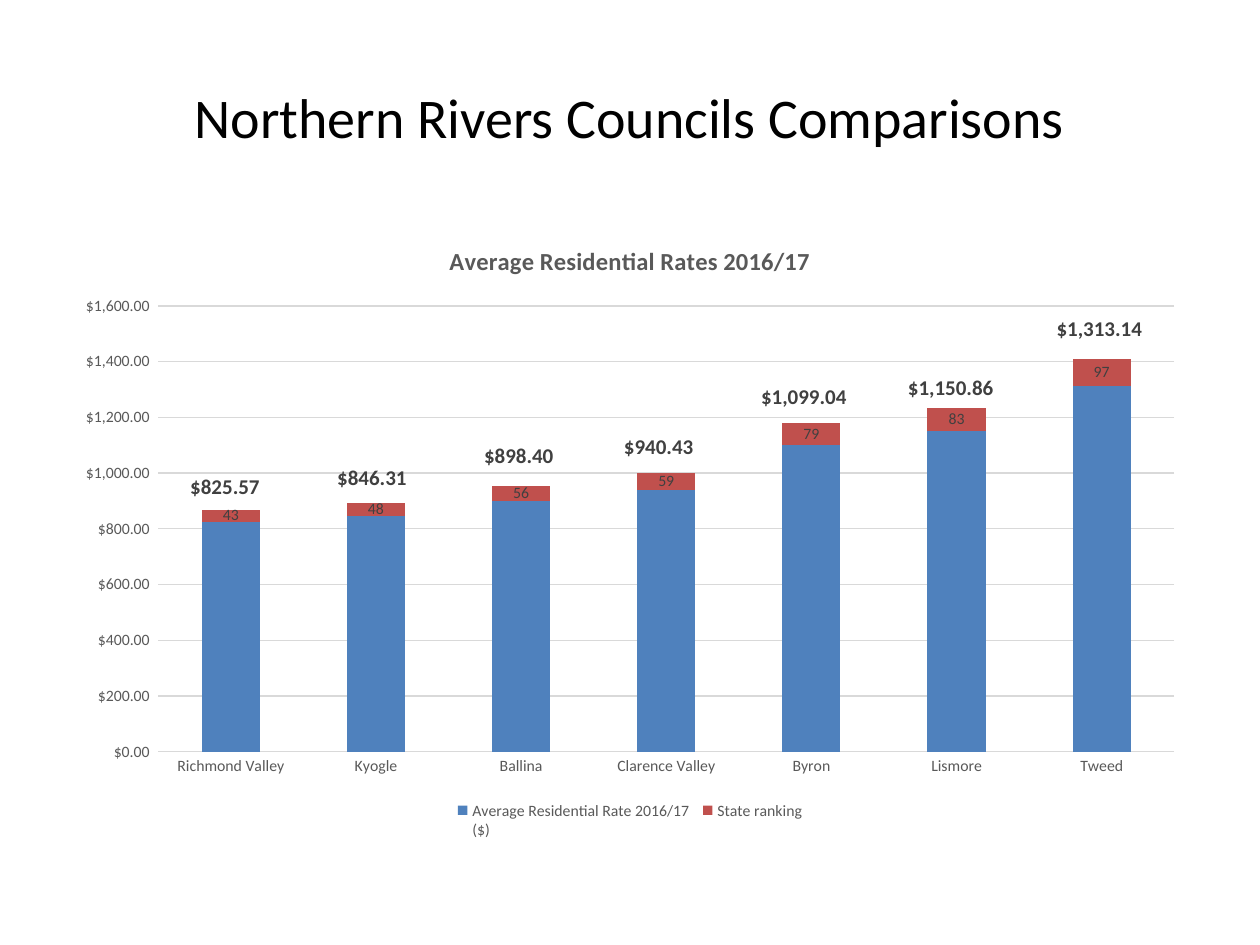
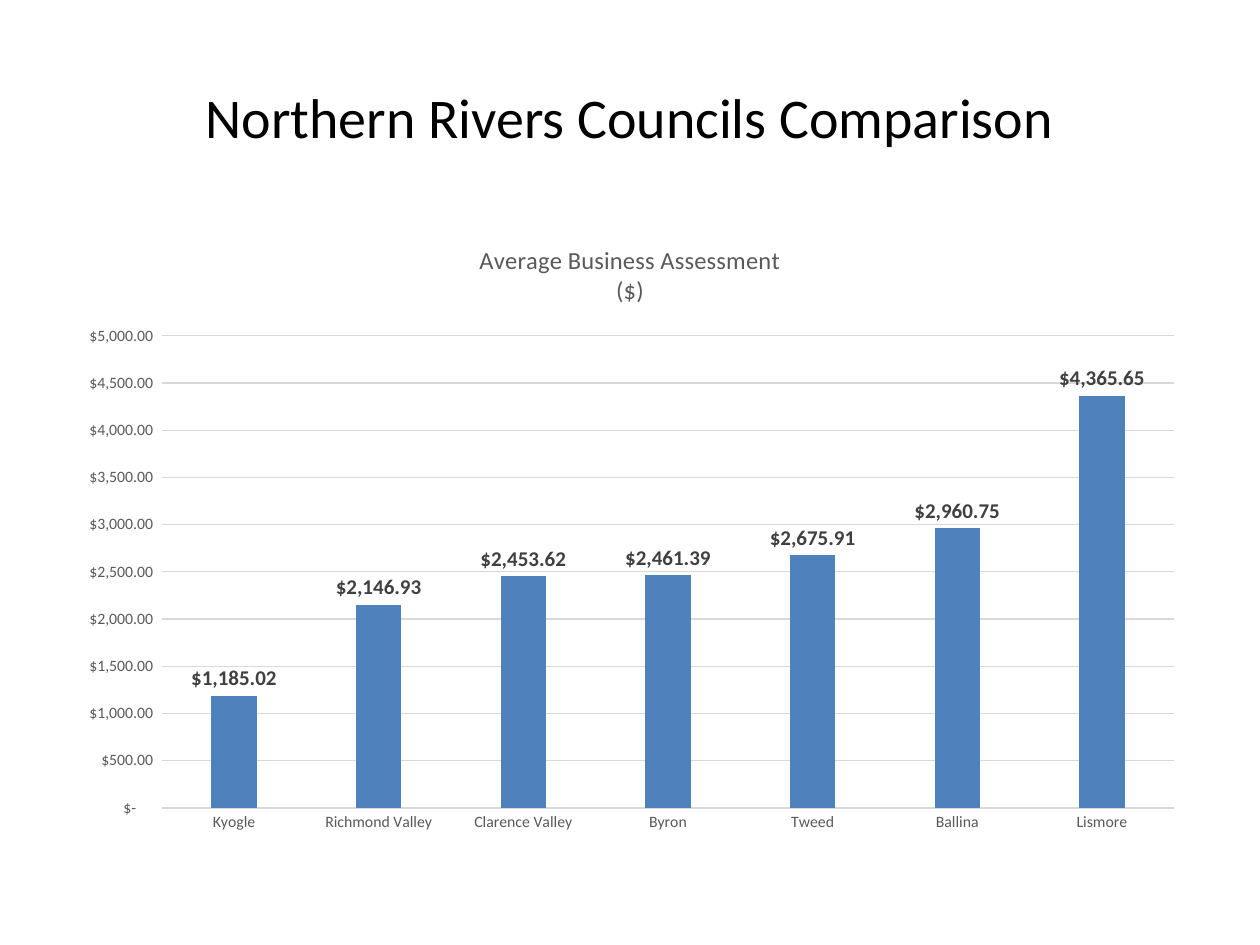
from copy import deepcopy
from dataclasses import dataclass

from pptx import Presentation
from pptx.chart.data import CategoryChartData
from pptx.dml.color import RGBColor
from pptx.enum.chart import XL_CHART_TYPE, XL_LABEL_POSITION, XL_LEGEND_POSITION, XL_TICK_MARK
from pptx.enum.text import MSO_ANCHOR, PP_ALIGN
from pptx.oxml import parse_xml
from pptx.oxml.ns import nsdecls
from pptx.util import Pt


@dataclass(frozen=True)
class Theme:
    font: str = "Calibri"
    black: str = "000000"
    axis_text: str = "595959"
    label_text: str = "404040"
    grid: str = "D9D9D9"
    blue: str = "4F81BD"
    red: str = "C0504D"
    title_size: int = 32
    chart_title_size: int = 14
    value_size: int = 12
    chart_size: int = 10
    small_size: int = 9
    line_width: float = 0.75


THEME = Theme()
CHART_LEFT, CHART_TOP, CHART_WIDTH, CHART_HEIGHT = 36, 126, 648, 356.4
RATE_FORMAT = r'"$"#,##0.00_);[Red]\("$"#,##0.00\)'
ACCOUNTING_FORMAT = r'_("$"* #,##0.00_);_("$"* \(#,##0.00\);_("$"* "-"??_);_(@_)'


def manual_layout(**parts):
    content = "".join(f'<c:{name} val="{value}"/>' for name, value in parts.items())
    return parse_xml(f"<c:layout {nsdecls('c')}><c:manualLayout>{content}"
                     "</c:manualLayout></c:layout>")


def hide_leader_lines(series):
    labels = series._element.xpath("c:dLbls")[0]
    for element in labels.xpath("c:showLeaderLines | c:leaderLines | c:extLst"):
        labels.remove(element)
    labels.append(parse_xml(f'<c:showLeaderLines {nsdecls("c")} val="0"/>'))
    labels.append(parse_xml(
        f'<c:extLst {nsdecls("c")}><c:ext uri="{{CE6537A1-D6FC-4f65-9D91-7224C49458BB}}" '
        'xmlns:c15="http://schemas.microsoft.com/office/drawing/2012/chart">'
        '<c15:showLeaderLines val="0"/></c:ext></c:extLst>'))


class Deck:
    def __init__(self, theme):
        self.theme = theme
        self.presentation = Presentation()
        self.presentation.slide_width = Pt(720)
        self.presentation.slide_height = Pt(540)
        self.slide = None

    def style_font(self, font, size, color, bold=False):
        font.name = self.theme.font
        font.size = Pt(size)
        font.bold = bold
        font.color.rgb = RGBColor.from_string(color)

    def style_line(self, line):
        line.color.rgb = RGBColor.from_string(self.theme.grid)
        line.width = Pt(self.theme.line_width)

    def add_slide(self, title):
        self.slide = self.presentation.slides.add_slide(self.presentation.slide_layouts[5])
        shape = self.slide.shapes.title
        shape.left, shape.top, shape.width, shape.height = Pt(36), Pt(21.6), Pt(648), Pt(90)
        shape.text_frame.text = title
        shape.text_frame.vertical_anchor = MSO_ANCHOR.MIDDLE
        paragraph = shape.text_frame.paragraphs[0]
        paragraph.alignment = PP_ALIGN.CENTER
        self.style_font(paragraph.font, self.theme.title_size, self.theme.black)

    def add_column_chart(self, chart_type, categories, series_values, title, title_bold,
                         gap, overlap, plot_box):
        data = CategoryChartData()
        data.categories = categories
        for name, values in series_values.items():
            data.add_series(name, values)
        chart = self.slide.shapes.add_chart(
            chart_type, Pt(CHART_LEFT), Pt(CHART_TOP), Pt(CHART_WIDTH), Pt(CHART_HEIGHT), data).chart
        self.style_font(chart.font, self.theme.chart_size, self.theme.black)
        chart.has_legend = False
        chart.has_title = True
        chart.chart_title.text_frame.text = title
        for paragraph in chart.chart_title.text_frame.paragraphs:
            self.style_font(paragraph.font, self.theme.chart_title_size,
                            self.theme.axis_text, title_bold)
        plot = chart.plots[0]
        plot.gap_width, plot.overlap = gap, overlap
        plot.vary_by_categories = False
        for series, color in zip(plot.series, (self.theme.blue, self.theme.red)):
            series.format.fill.solid()
            series.format.fill.fore_color.rgb = RGBColor.from_string(color)
        plot_area = chart._chartSpace.chart.plotArea
        for layout in plot_area.xpath("c:layout"):
            plot_area.remove(layout)
        x, y, width, height = plot_box
        plot_area.insert(0, manual_layout(layoutTarget="inner", xMode="edge", yMode="edge",
                                          x=x, y=y, w=width, h=height))
        return chart

    def format_axes(self, chart, maximum, step, number_format):
        for axis in (chart.category_axis, chart.value_axis):
            axis.major_tick_mark = axis.minor_tick_mark = XL_TICK_MARK.NONE
            self.style_font(axis.tick_labels.font, self.theme.small_size, self.theme.axis_text)
        self.style_line(chart.category_axis.format.line)
        value_axis = chart.value_axis
        value_axis.minimum_scale, value_axis.maximum_scale = 0, maximum
        value_axis.major_unit = step
        value_axis.format.line.fill.background()
        self.style_line(value_axis.major_gridlines.format.line)
        value_axis.tick_labels.number_format = number_format
        value_axis.tick_labels.number_format_is_linked = False

    def add_labels(self, series, size, bold=False, number_format="General", position=None):
        labels = series.data_labels
        labels.show_value = True
        labels.number_format = number_format
        labels.number_format_is_linked = False
        self.style_font(labels.font, size, self.theme.label_text, bold)
        if position is not None:
            labels.position = position
        hide_leader_lines(series)

    def move_labels(self, series, shifts):
        number_format = series._element.xpath("c:dLbls/c:numFmt")[0]
        for index, (across, down) in enumerate(shifts):
            self.style_font(series.points[index].data_label.font, self.theme.value_size,
                            self.theme.label_text, True)
            label = series._element.xpath(f"c:dLbls/c:dLbl[c:idx/@val='{index}']")[0]
            label.insert(1, manual_layout(x=round(across / CHART_WIDTH, 4),
                                          y=round(down / CHART_HEIGHT, 4)))
            label.insert(2, deepcopy(number_format))

    def add_legend(self, chart):
        chart.has_legend = True
        chart.legend.position = XL_LEGEND_POSITION.BOTTOM
        chart.legend.include_in_layout = False
        self.style_font(chart.legend.font, self.theme.small_size, self.theme.axis_text)


def add_residential_slide(deck):
    deck.add_slide("Northern Rivers Councils Comparisons")
    councils = ["Richmond Valley", "Kyogle", "Ballina", "Clarence Valley",
                "Byron", "Lismore", "Tweed"]
    rates = [825.57, 846.31, 898.4, 940.43, 1099.04, 1150.86, 1313.14]
    rankings = [43, 48, 56, 59, 79, 83, 97]
    label_lifts = [13, 14, 17, 15, 15, 11, 17]
    label_shifts = [-2, -1, 0, -3, -3, -2, 0]
    maximum, plot_share = 1600, 0.715
    chart = deck.add_column_chart(
        XL_CHART_TYPE.COLUMN_STACKED, councils,
        {"Average Residential Rate 2016/17 \n($)": rates, "State ranking": rankings},
        "Average Residential Rates 2016/17", True, 150, 100, (0.084, 0.137, 0.896, plot_share))
    deck.format_axes(chart, maximum, 200, RATE_FORMAT)
    rate_series, ranking_series = chart.plots[0].series
    deck.add_labels(rate_series, THEME.value_size, True, RATE_FORMAT)
    deck.add_labels(ranking_series, THEME.small_size)
    points_per_dollar = plot_share * CHART_HEIGHT / maximum
    deck.move_labels(rate_series, [
        (shift, -(rate / 2 + ranking) * points_per_dollar - lift)
        for rate, ranking, shift, lift in zip(rates, rankings, label_shifts, label_lifts)])
    deck.add_legend(chart)


def add_business_slide(deck):
    deck.add_slide("Northern Rivers Councils Comparison")
    councils = ["Kyogle", "Richmond Valley", "Clarence Valley", "Byron",
                "Tweed", "Ballina", "Lismore"]
    assessments = [1185.02, 2146.93, 2453.62, 2461.39, 2675.91, 2960.75, 4365.65]
    chart = deck.add_column_chart(
        XL_CHART_TYPE.COLUMN_CLUSTERED, councils, {"Series 1": assessments},
        "Average Business Assessment\n($)", False, 219, -27, (0.087, 0.185, 0.893, 0.757))
    deck.format_axes(chart, 5000, 500, ACCOUNTING_FORMAT)
    deck.add_labels(chart.plots[0].series[0], THEME.value_size, True, ACCOUNTING_FORMAT,
                    XL_LABEL_POSITION.OUTSIDE_END)


def main():
    deck = Deck(THEME)
    add_residential_slide(deck)
    add_business_slide(deck)
    deck.presentation.save("out.pptx")


if __name__ == "__main__":
    main()
